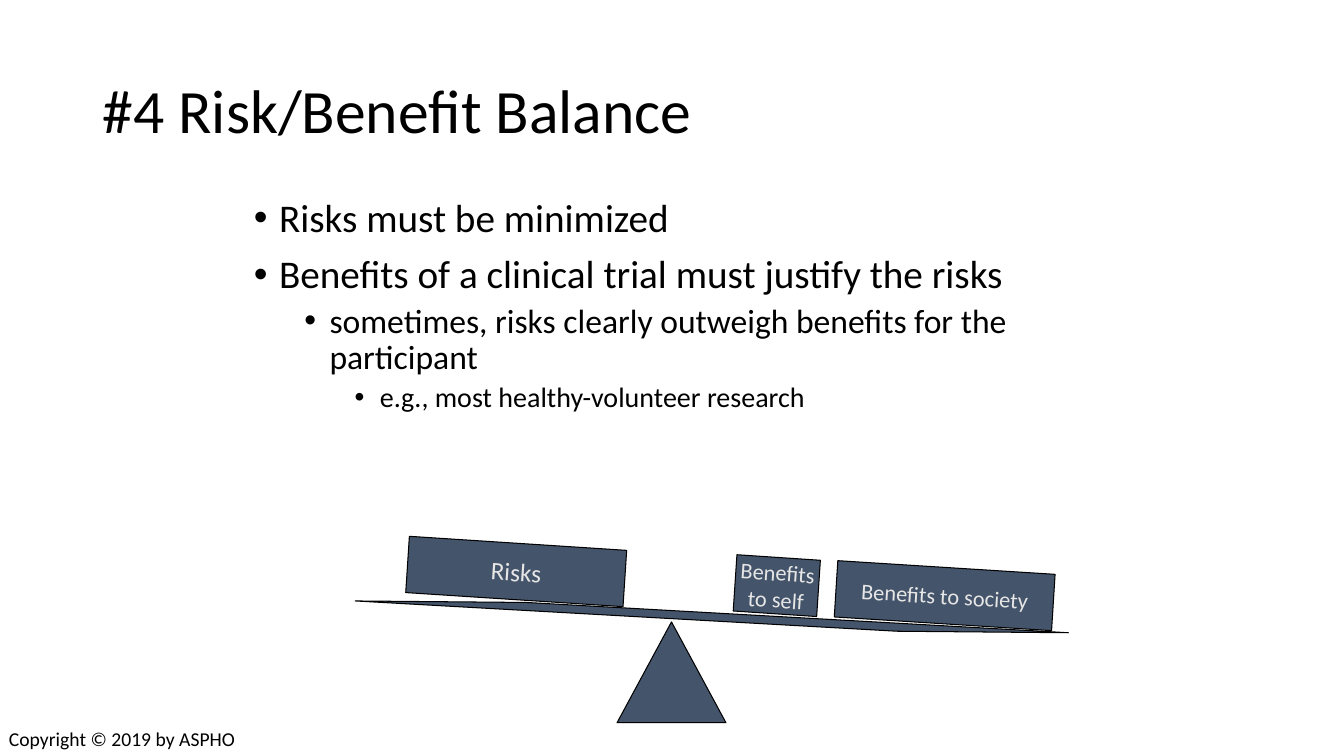
from dataclasses import dataclass

from lxml.etree import SubElement
from pptx import Presentation
from pptx.dml.color import RGBColor
from pptx.enum.shapes import MSO_SHAPE
from pptx.enum.text import MSO_ANCHOR, PP_ALIGN
from pptx.oxml.ns import qn
from pptx.util import Inches, Pt

BLACK = RGBColor(0x00, 0x00, 0x00)
SLATE = RGBColor(0x44, 0x54, 0x6A)
PALE = RGBColor(0xE7, 0xE6, 0xE6)
FONT = "Calibri"


@dataclass
class Bullet:
    text: str
    level: int
    size: int
    before: int = 0


@dataclass
class Weight:
    lines: list[str]
    left: float
    top: float
    width: float
    angle: float
    size: int


BULLETS = [
    Bullet("Risks must be minimized", 0, 28),
    Bullet("Benefits of a clinical trial must justify the risks", 0, 28, 10),
    Bullet("sometimes, risks clearly outweigh benefits for the participant", 1, 24, 5),
    Bullet("e.g., most healthy-volunteer research", 2, 20, 5),
]
WEIGHTS = [
    Weight(["Risks"], 4.04, 5.39, 2.16, 3.7, 18),
    Weight(["Benefits", "to self"], 7.29, 5.53, 0.83, 3.8, 16),
    Weight(["Benefits to society"], 8.29, 5.63, 2.16, 3.6, 16),
]


def add_text(tf, text: str, *, size: float, color: RGBColor = BLACK, align=PP_ALIGN.LEFT,
             spacing: float = 1.0, before: float = 0, level: int | None = None) -> None:
    """Add one paragraph; a level makes it a bullet."""
    p = tf.paragraphs[0]
    if p.runs:
        p = tf.add_paragraph()
    p.alignment = align
    p.line_spacing = spacing
    p.space_before = Pt(before)
    if level is not None:
        p.level = level
        pPr = p._p.get_or_add_pPr()
        pPr.set("marL", str(Inches(0.25 + 0.5 * level)))
        pPr.set("indent", str(Inches(-0.25)))
        SubElement(pPr, qn("a:buFont")).set("typeface", "Arial")
        SubElement(pPr, qn("a:buChar")).set("char", "•")
    r = p.add_run()
    r.text = text
    r.font.name = FONT
    r.font.size = Pt(size)
    r.font.color.rgb = color


def add_box(s, left: float, top: float, width: float, height: float,
            anchor=MSO_ANCHOR.TOP):
    """Add an empty wrapping text box and return its text frame."""
    tf = s.shapes.add_textbox(Inches(left), Inches(top), Inches(width), Inches(height)).text_frame
    tf.word_wrap = True
    tf.vertical_anchor = anchor
    return tf


def add_part(s, kind, left: float, top: float, width: float, height: float,
             angle: float = 0):
    """Add one outlined part of the seesaw."""
    sp = s.shapes.add_shape(kind, Inches(left), Inches(top), Inches(width), Inches(height))
    sp.rotation = angle
    sp.shadow.inherit = False
    sp.fill.solid()
    sp.fill.fore_color.rgb = SLATE
    sp.line.color.rgb = BLACK
    sp.line.width = Pt(0.75)
    return sp


def main() -> None:
    prs = Presentation()
    prs.slide_width, prs.slide_height = Inches(13.33), Inches(7.5)
    s = prs.slides.add_slide(prs.slide_layouts[6])

    # Title and bullets
    title = add_box(s, 0.92, 0.4, 11.5, 1.45, MSO_ANCHOR.MIDDLE)
    add_text(title, "#4 Risk/Benefit Balance", size=44, spacing=0.9)
    body = add_box(s, 2.42, 1.92, 8.5, 2.92)
    for b in BULLETS:
        add_text(body, b.text, size=b.size, spacing=0.9, before=b.before, level=b.level)

    # Seesaw: fulcrum, plank and weights
    add_part(s, MSO_SHAPE.ISOSCELES_TRIANGLE, 6.12, 6.17, 1.08, 1)
    plank = add_part(s, MSO_SHAPE.PARALLELOGRAM, 3.52, 6.08, 7.08, 0.08, 3.2)
    plank.adjustments[0] = 21.25
    for w in WEIGHTS:
        tf = add_part(s, MSO_SHAPE.RECTANGLE, w.left, w.top, w.width, 0.56, w.angle).text_frame
        tf.word_wrap = False
        tf.vertical_anchor = MSO_ANCHOR.MIDDLE
        for line in w.lines:
            add_text(tf, line, size=w.size, color=PALE, align=PP_ALIGN.CENTER)

    # Copyright line
    add_text(add_box(s, -0.01, 7.16, 2.48, 0.34), "Copyright © 2019 by ASPHO", size=14)

    prs.save("out.pptx")


if __name__ == "__main__":
    main()
